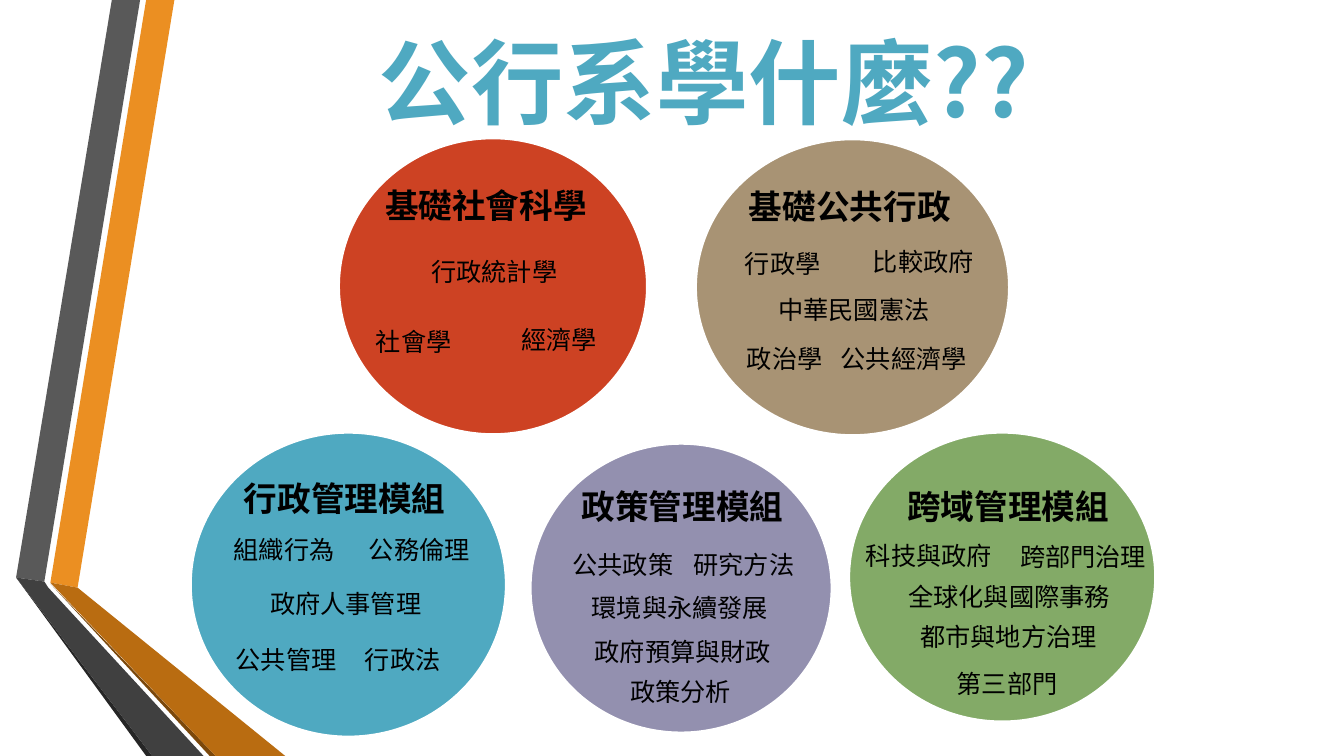
import pptx
import pptx.util
import pptx.dml.color
import pptx.enum.shapes
import pptx.enum.text
import lxml.etree

Inch = pptx.util.Inches
FACE = "Noto Sans CJK SC"


def hue(code):
    return pptx.dml.color.RGBColor.from_string(code)


def write(frame, text, size=18, bold=False, color="000000", align="LEFT", wrap=False):
    frame.word_wrap = wrap
    frame.auto_size = pptx.enum.text.MSO_AUTO_SIZE.NONE
    frame.vertical_anchor = pptx.enum.text.MSO_ANCHOR.MIDDLE
    para = frame.paragraphs[0]
    para.alignment = getattr(pptx.enum.text.PP_ALIGN, align)
    run = para.add_run()
    run.text = text
    font = run.font
    font.size = pptx.util.Pt(size)
    font.bold = bold
    font.name = FACE
    font.color.rgb = hue(color)
    tag = "{http://schemas.openxmlformats.org/drawingml/2006/main}ea"
    lxml.etree.SubElement(run._r.get_or_add_rPr(), tag, typeface=FACE)


deck = pptx.Presentation()
deck.slide_width, deck.slide_height = Inch(13.33), Inch(7.5)
slide = deck.slides.add_slide(deck.slide_layouts[5])
shapes = slide.shapes

bands = [
    ("EB8F22", [(50, 578), (77, 583), (173, 0), (145, 0)]),
    ("595959", [(139, 0), (111, 0), (16, 573), (44, 577)]),
    ("262626", [(16, 573), (145, 750), (151, 750)]),
    ("7B480B", [(50, 579), (208, 750), (214, 750)]),
    ("B96C11", [(50, 578), (214, 750), (283, 750), (77, 583)]),
    ("404040", [(202, 750), (48, 583), (44, 577), (16, 573), (151, 750)]),
]
for color, dots in bands:
    pen = shapes.build_freeform(*dots[0], scale=Inch(0.01))
    pen.add_line_segments(dots[1:], close=True)
    band = pen.convert_to_shape()
    band.shadow.inherit = False
    band.fill.solid()
    band.fill.fore_color.rgb = hue(color)
    band.line.fill.background()

title = shapes.title
title.left, title.top, title.width, title.height = map(Inch, (2.93, 0.19, 8.1, 1.21))
write(title.text_frame, "公行系學什麼??", size=66, bold=True, color="4FA9C1",
      align="CENTER", wrap=True)

groups = [
    ("A89374", (6.9, 1.38, 3.11, 2.94), (7.33, 1.79, "基礎公共行政"), [
        (7.29, 2.41, "行政學"), (8.56, 2.39, "比較政府"),
        (7.62, 2.87, "中華民國憲法"),
        (7.31, 3.36, "政治學"), (8.24, 3.36, "公共經濟學")]),
    ("CD4223", (3.36, 1.37, 3.06, 2.94), (3.72, 1.78, "基礎社會科學"), [
        (4.18, 2.49, "行政統計學"),
        (3.63, 3.19, "社會學"), (5.07, 3.17, "經濟學")]),
    ("4FA9C1", (1.89, 4.29, 3.13, 3.02), (2.32, 4.69, "行政管理模組"), [
        (2.22, 5.25, "組織行為"), (3.56, 5.25, "公務倫理"),
        (2.58, 5.79, "政府人事管理"),
        (2.24, 6.34, "公共管理"), (3.52, 6.34, "行政法")]),
    ("9390AF", (5.26, 4.4, 2.99, 2.87), (5.67, 4.77, "政策管理模組"), [
        (5.58, 5.4, "公共政策"), (6.78, 5.4, "研究方法"),
        (5.77, 5.83, "環境與永續發展"),
        (5.8, 6.26, "政府預算與財政"),
        (6.15, 6.66, "政策分析")]),
    ("83AA67", (8.42, 4.29, 3.04, 2.87), (8.9, 4.77, "跨域管理模組"), [
        (8.49, 5.31, "科技與政府"), (10.02, 5.32, "跨部門治理"),
        (8.91, 5.72, "全球化與國際事務"),
        (9.03, 6.11, "都市與地方治理"),
        (9.39, 6.58, "第三部門")]),
]
for color, place, head, topics in groups:
    disc = shapes.add_shape(pptx.enum.shapes.MSO_SHAPE.OVAL, *map(Inch, place))
    disc.shadow.inherit = False
    disc.fill.solid()
    disc.fill.fore_color.rgb = hue(color)
    disc.line.color.rgb = hue("FFFFFF")
    disc.line.width = pptx.util.Pt(1.75)
    for left, top, text in [head] + topics:
        main = text == head[2]
        size = 24 if main else 18
        wide = 0.21 + len(text) * size / 72
        tall = 0.5 if main else 0.4
        box = shapes.add_textbox(*map(Inch, (left, top, wide, tall)))
        write(box.text_frame, text, size=size, bold=main)

deck.save("out.pptx")
